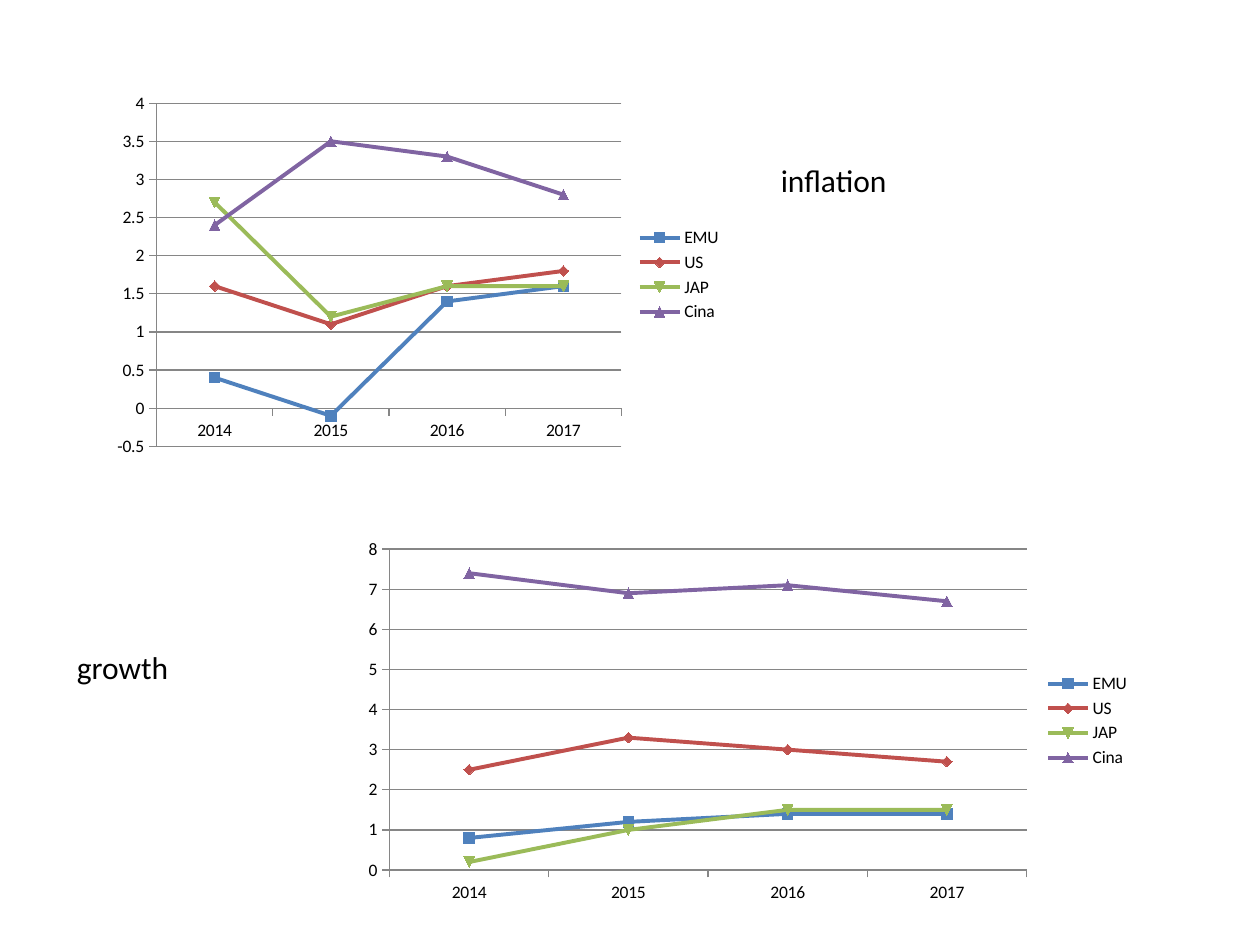
import pptx
import pptx.chart.data
import pptx.dml.color
import pptx.enum.chart
import pptx.enum.text
import pptx.util
from pptx.util import Cm, Pt

RGBColor = pptx.dml.color.RGBColor
BLACK = RGBColor(0x00, 0x00, 0x00)
GREY = RGBColor(0x86, 0x86, 0x86)
BLUE = RGBColor(0x4F, 0x81, 0xBD)
RED = RGBColor(0xC0, 0x50, 0x4D)
GREEN = RGBColor(0x9B, 0xBB, 0x59)
PURPLE = RGBColor(0x80, 0x64, 0xA2)
SERIES_COLOURS = [BLUE, RED, GREEN, PURPLE]
FONT = "Calibri"

# Content: places are left, top, width, height in centimetres
YEARS = ["2014", "2015", "2016", "2017"]
PANELS = [
    {
        "label": "inflation",
        "label_place": (15.49, 3.12, 5.99, 1.02),
        "chart_place": (2.11, 1.73, 12.7, 7.62),
        "axis": (-0.5, 4, 0.5),
        "series": {
            "EMU": (0.4, -0.1, 1.4, 1.6),
            "US": (1.6, 1.1, 1.6, 1.8),
            "JAP ": (2.7, 1.2, 1.6, 1.6),
            "Cina": (2.4, 3.5, 3.3, 2.8),
        },
    },
    {
        "label": "growth",
        "label_place": (1.3, 12.93, 3.2, 1.02),
        "chart_place": (7.11, 10.72, 15.93, 7.62),
        "axis": (0, 8, 1),
        "series": {
            "EMU": (0.8, 1.2, 1.4, 1.4),
            "US": (2.5, 3.3, 3, 2.7),
            "JAP": (0.2, 1, 1.5, 1.5),
            "Cina": (7.4, 6.9, 7.1, 6.7),
        },
    },
]


def add_text(page, text, place, size=18, colour=BLACK):
    box = page.shapes.add_textbox(*map(Cm, place))
    box.text_frame.word_wrap = True
    box.text_frame.auto_size = pptx.enum.text.MSO_AUTO_SIZE.SHAPE_TO_FIT_TEXT
    span = box.text_frame.paragraphs[0].add_run()
    span.text = text
    span.font.name = FONT
    span.font.size = Pt(size)
    span.font.color.rgb = colour


def format_line(line, colour, width):
    line.color.rgb = colour
    line.width = Pt(width)


def add_line_chart(page, series, place, axis):
    data = pptx.chart.data.CategoryChartData()
    data.categories = YEARS
    for name, values in series.items():
        data.add_series(name, values)
    kind = pptx.enum.chart.XL_CHART_TYPE.LINE_MARKERS
    chart = page.shapes.add_chart(kind, *map(Cm, place), data).chart

    # Text and legend
    chart.has_title = False
    chart.font.name = FONT
    chart.font.size = Pt(10)
    chart.font.color.rgb = BLACK
    chart.has_legend = True
    chart.legend.position = pptx.enum.chart.XL_LEGEND_POSITION.RIGHT
    chart.legend.include_in_layout = False

    # Axes and gridlines
    for each_axis in (chart.category_axis, chart.value_axis):
        each_axis.major_tick_mark = pptx.enum.chart.XL_TICK_MARK.OUTSIDE
        each_axis.minor_tick_mark = pptx.enum.chart.XL_TICK_MARK.NONE
        format_line(each_axis.format.line, GREY, 0.75)
    value_axis = chart.value_axis
    value_axis.minimum_scale, value_axis.maximum_scale, value_axis.major_unit = axis
    value_axis.has_major_gridlines = True
    format_line(value_axis.major_gridlines.format.line, GREY, 0.75)

    # Series
    chart.plots[0].vary_by_categories = False
    for line_series, colour in zip(chart.plots[0].series, SERIES_COLOURS):
        line_series.smooth = False
        format_line(line_series.format.line, colour, 2.25)
        marker = line_series.marker
        marker.size = 6
        marker.format.fill.solid()
        marker.format.fill.fore_color.rgb = colour
        format_line(marker.format.line, colour, 0.75)


def main():
    deck = pptx.Presentation()
    deck.slide_width, deck.slide_height = Cm(25.4), Cm(19.05)
    page = deck.slides.add_slide(deck.slide_layouts[6])
    for panel in PANELS:
        add_line_chart(page, panel["series"], panel["chart_place"], panel["axis"])
        add_text(page, panel["label"], panel["label_place"])
    deck.save("out.pptx")


if __name__ == "__main__":
    main()
